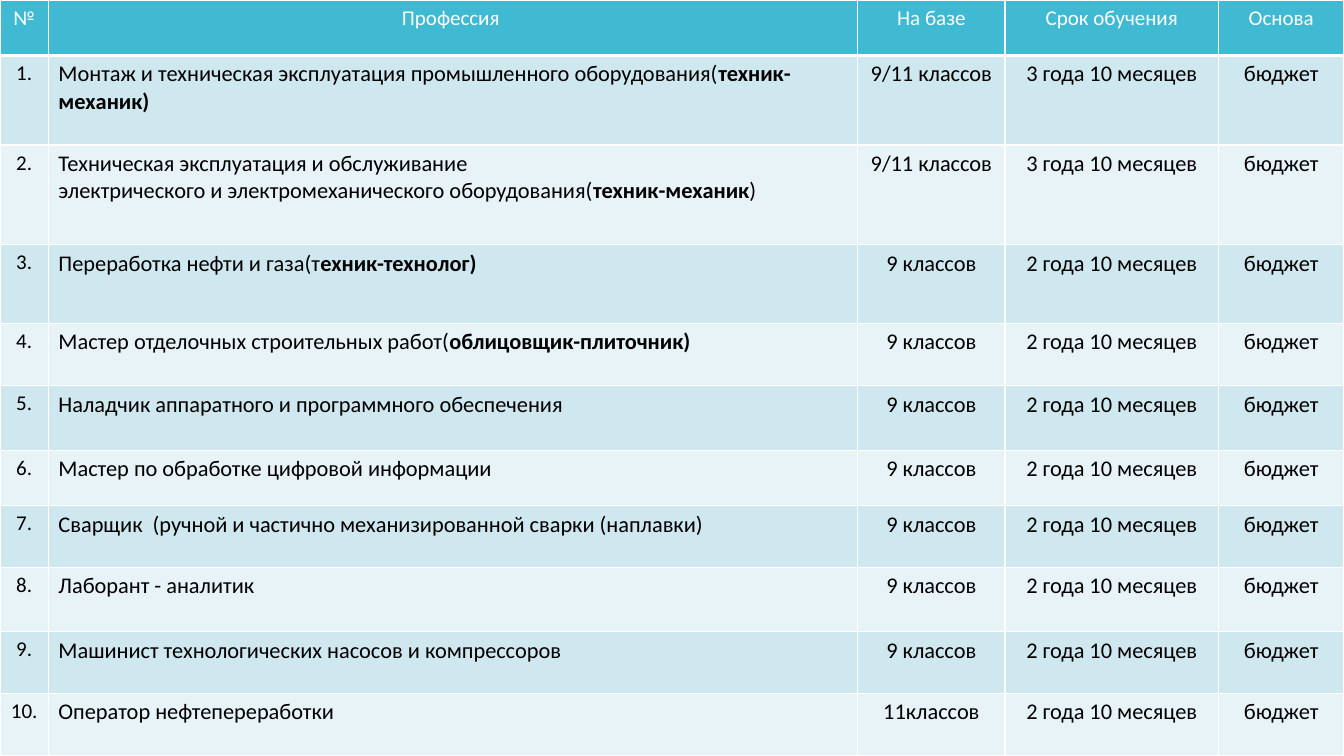
from dataclasses import dataclass

from lxml.etree import SubElement as add_element
from pptx import Presentation
from pptx.dml.color import RGBColor
from pptx.enum.text import PP_ALIGN as Align
from pptx.oxml.ns import qn
from pptx.util import Pt


@dataclass(frozen=True)
class Theme:
    font: str = "Calibri"
    header_fill: str = "40BAD2"
    band_fills: tuple = ("CFE7EE", "E8F3F7")
    header_text: str = "FFFFFF"
    body_text: str = "000000"
    rule: str = "FFFFFF"
    rule_width: float = 1
    header_rule_width: float = 3
    small: float = 15
    normal: float = 16


class SlideBuilder:
    def __init__(self, slide, theme):
        self.slide = slide
        self.theme = theme

    def table(self, rows, widths, heights):
        frame = self.slide.shapes.add_table(
            len(rows), len(widths), 0, 0, Pt(sum(widths)), Pt(sum(heights))
        )
        table = frame.table
        table.horz_banding = False
        for column, width in zip(table.columns, widths):
            column.width = Pt(width)
        for row, height in zip(table.rows, heights):
            row.height = Pt(height)
        for r, row in enumerate(rows):
            for c, text in enumerate(row):
                self.cell(table.cell(r, c), r, c, text)

    def cell(self, cell, r, c, text):
        theme = self.theme
        header = r == 0
        self.borders(cell, theme.header_rule_width if header else theme.rule_width)
        fill = theme.header_fill if header else theme.band_fills[(r - 1) % 2]
        cell.fill.solid()
        cell.fill.fore_color.rgb = RGBColor.from_string(fill)
        color = theme.header_text if header else theme.body_text
        size = theme.small if header or c == 0 else theme.normal
        align = Align.LEFT if c == 1 and not header else Align.CENTER
        self.text(cell.text_frame, text, size, color, align)

    def borders(self, cell, bottom_width):
        properties = cell._tc.get_or_add_tcPr()
        for side in "LRTB":
            width = bottom_width if side == "B" else self.theme.rule_width
            line = add_element(properties, qn(f"a:ln{side}"), w=str(Pt(width)))
            add_element(
                add_element(line, qn("a:solidFill")),
                qn("a:srgbClr"),
                val=self.theme.rule,
            )

    def text(self, frame, text, size, color, align):
        for i, line in enumerate(text.split("\n")):
            paragraph = frame.add_paragraph() if i else frame.paragraphs[0]
            paragraph.alignment = align
            for part, words in enumerate(line.split("|")):
                run = paragraph.add_run()
                run.text = words
                run.font.name = self.theme.font
                run.font.size = Pt(size)
                run.font.bold = part % 2 == 1
                run.font.color.rgb = RGBColor.from_string(color)


HEADINGS = ("№", "Профессия ", "На базе", "Срок обучения", "Основа")
LONG_TERM = "3 года 10 месяцев"
SHORT_TERM = "2 года 10 месяцев"
FUNDING = "бюджет"
EITHER_BASE = "9/11 классов"
NINE_BASE = "9 классов"

PROFESSIONS = (
    ("Монтаж и техническая эксплуатация промышленного оборудования(|техник-механик)",
     EITHER_BASE, LONG_TERM),
    ("Техническая эксплуатация и обслуживание\n"
     "электрического и электромеханического оборудования(|техник-механик|)",
     EITHER_BASE, LONG_TERM),
    ("Переработка нефти и газа(т|ехник-технолог)", NINE_BASE, SHORT_TERM),
    ("Мастер отделочных строительных работ(|облицовщик-плиточник) ", NINE_BASE, SHORT_TERM),
    ("Наладчик аппаратного и программного обеспечения", NINE_BASE, SHORT_TERM),
    ("Мастер по обработке цифровой информации", NINE_BASE, SHORT_TERM),
    ("Сварщик  (ручной и частично механизированной сварки (наплавки)",
     NINE_BASE, SHORT_TERM),
    ("Лаборант - аналитик", NINE_BASE, SHORT_TERM),
    ("Машинист технологических насосов и компрессоров", NINE_BASE, SHORT_TERM),
    ("Оператор нефтепереработки", "11классов", SHORT_TERM),
)
COLUMN_WIDTHS = (34.6, 578.2, 105.1, 152.6, 89.5)
ROW_HEIGHTS = (39.6, 64, 71.3, 56.2, 44.6, 46.1, 39.6, 43.9, 46.1, 43.9, 44.7)


def main():
    deck = Presentation()
    deck.slide_width = Pt(960)
    deck.slide_height = Pt(540)
    builder = SlideBuilder(deck.slides.add_slide(deck.slide_layouts[6]), Theme())
    rows = [HEADINGS] + [
        (f"{number}.", *profession, FUNDING)
        for number, profession in enumerate(PROFESSIONS, 1)
    ]
    builder.table(rows, COLUMN_WIDTHS, ROW_HEIGHTS)
    deck.save("out.pptx")


if __name__ == "__main__":
    main()
